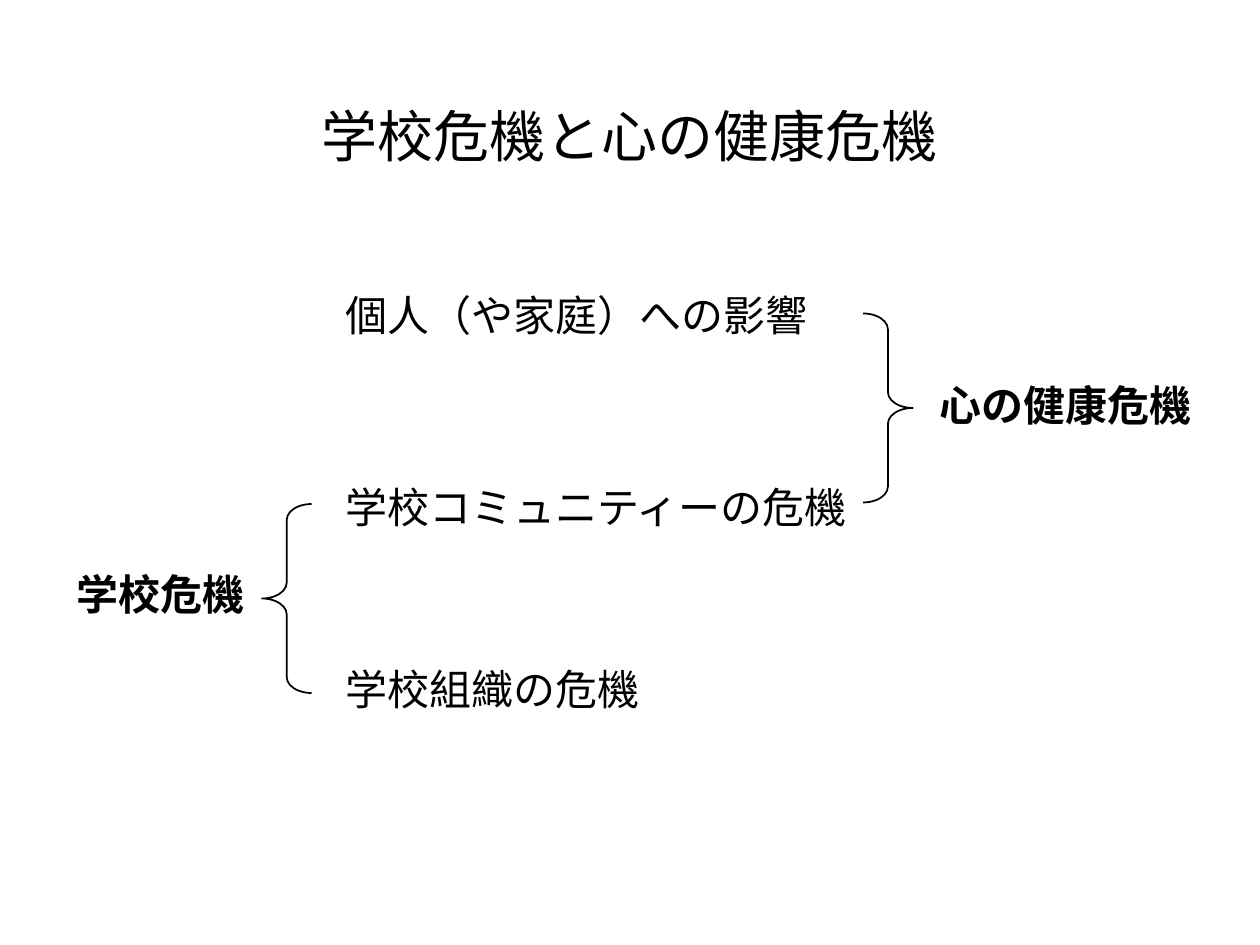
from lxml import etree
from pptx import Presentation
from pptx.dml.color import RGBColor
from pptx.enum import shapes, text
from pptx.oxml.ns import qn
from pptx.util import Cm, Pt

BLACK = RGBColor(0, 0, 0)
FONT = "Noto Sans CJK JP"

LEVEL_LEFT = 6.71
LABEL_HEIGHT = 1.27
LEVELS = [
    ("個人（や家庭）への影響", 5.72, 10.01),
    ("学校コミュニティーの危機", 9.58, 11),
    ("学校組織の危機", 13.26, 8.99),
]
CRISES = [
    ("心の健康危機", 18.69, 7.52, 5.79),
    ("学校危機", 1.3, 11.33, 4.39),
]
BRACES = [(17.4, 6.32, 0), (5.28, 10.16, 180)]


def add_text(slide, wording, left, top, width, height, size=24, bold=False):
    sp = slide.shapes.add_textbox(Cm(left), Cm(top), Cm(width), Cm(height))
    tf = sp.text_frame
    tf.word_wrap = True
    p = tf.paragraphs[0]
    p.text = wording
    p.font.size = Pt(size)
    p.font.bold = bold
    p.font.color.rgb = BLACK
    p.font.name = FONT
    # East Asian glyphs take their typeface from a separate element
    latin = p._p.pPr.find(qn("a:defRPr")).find(qn("a:latin"))
    ea = etree.Element(qn("a:ea"), typeface=FONT)
    latin.addnext(ea)
    return sp


def add_title(slide, wording):
    sp = add_text(slide, wording, 2.9, 1.93, 19.6, 1.6, size=32)
    sp.text_frame.vertical_anchor = text.MSO_ANCHOR.MIDDLE
    sp.text_frame.paragraphs[0].alignment = text.PP_ALIGN.CENTER


def add_brace(slide, left, top, rotation):
    sp = slide.shapes.add_shape(
        shapes.MSO_SHAPE.RIGHT_BRACE, Cm(left), Cm(top), Cm(1), Cm(3.81))
    sp.adjustments[0] = 0.32
    sp.adjustments[1] = 0.5
    sp.rotation = rotation
    sp.shadow.inherit = False
    sp.fill.background()
    sp.line.color.rgb = BLACK
    sp.line.width = Pt(1)


def main():
    prs = Presentation()
    prs.slide_width, prs.slide_height = Cm(25.4), Cm(19.05)
    slide = prs.slides.add_slide(prs.slide_layouts[6])

    add_title(slide, "学校危機と心の健康危機")
    for wording, top, width in LEVELS:
        add_text(slide, wording, LEVEL_LEFT, top, width, LABEL_HEIGHT)
    for wording, left, top, width in CRISES:
        add_text(slide, wording, left, top, width, LABEL_HEIGHT, bold=True)
    for left, top, rotation in BRACES:
        add_brace(slide, left, top, rotation)

    prs.save("out.pptx")


if __name__ == "__main__":
    main()
